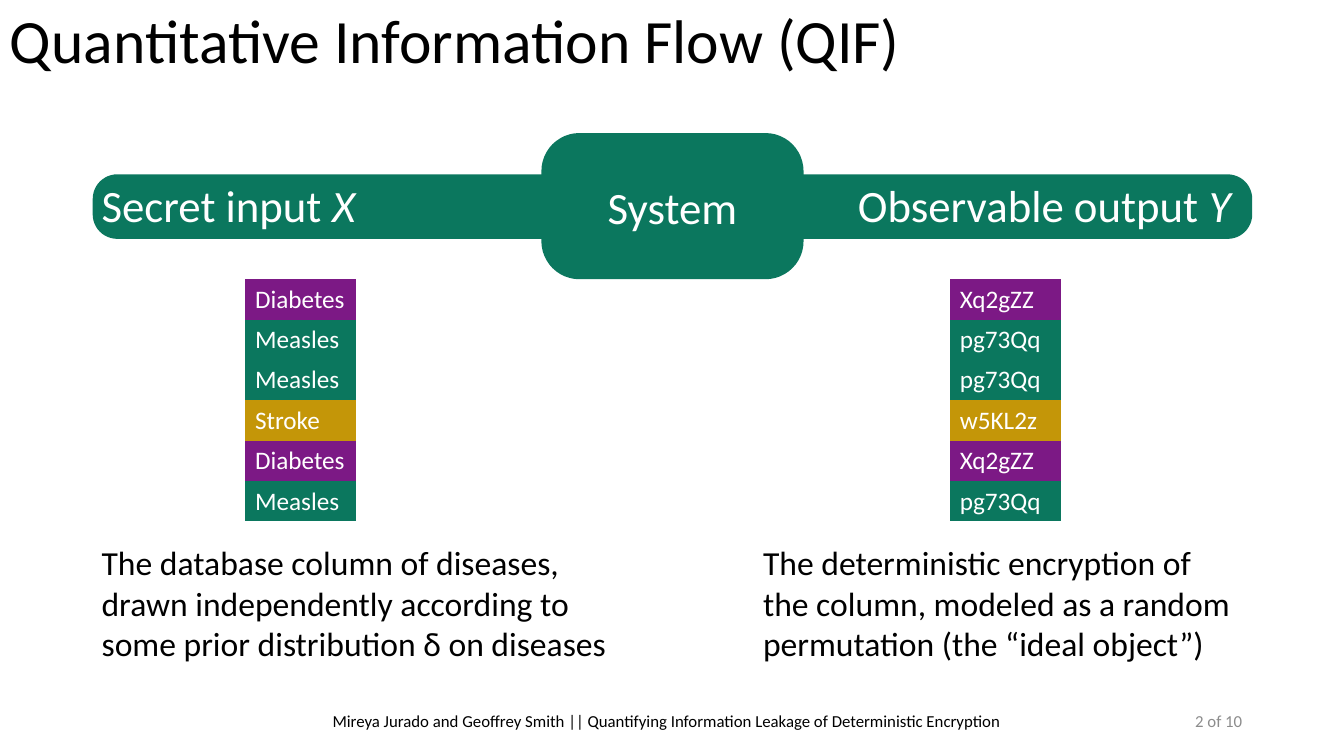
from pptx import Presentation
from pptx import util as u
from pptx.dml.color import RGBColor
from pptx.enum import shapes, text

EMU_PER_PX = 9144  # 100 px to the inch
FONT = "Calibri"
COLORS = {
    "green": "0B775E",
    "purple": "7C1985",
    "gold": "C49608",
    "black": "000000",
    "white": "FFFFFF",
    "gray": "8C8C8C",
}
PLAIN_TABLE_STYLE = "{2D5ABB26-0587-4C30-8999-92F81FD0307C}"

# Each disease has one ciphertext and one colour.
CIPHERTEXTS = {"Diabetes": "Xq2gZZ", "Measles": "pg73Qq", "Stroke": "w5KL2z"}
DISEASE_COLORS = {"Diabetes": "purple", "Measles": "green", "Stroke": "gold"}
PATIENTS = ["Diabetes", "Measles", "Measles", "Stroke", "Diabetes", "Measles"]


def px(*lengths):
    return [u.Emu(length * EMU_PER_PX) for length in lengths]


def color(name):
    return RGBColor.from_string(COLORS[name])


def fill_with(target, name):
    target.fill.solid()
    target.fill.fore_color.rgb = color(name)


def add_runs(frame, runs, size, name, align=text.PP_ALIGN.LEFT):
    """Write (words, italic) pairs into the first paragraph of the frame."""
    paragraph = frame.paragraphs[0]
    paragraph.alignment = align
    for words, italic in runs:
        run = paragraph.add_run()
        run.text = words
        run.font.name = FONT
        run.font.size = u.Pt(size)
        run.font.italic = italic
        run.font.color.rgb = color(name)


def add_label(slide, box, runs, size, name="black",
              align=text.PP_ALIGN.LEFT, anchor=text.MSO_ANCHOR.TOP):
    frame = slide.shapes.add_textbox(*px(*box)).text_frame
    frame.word_wrap = True
    frame.vertical_anchor = anchor
    add_runs(frame, runs, size, name, align)


def add_rounded_block(slide, box, rounding):
    block = slide.shapes.add_shape(
        shapes.MSO_SHAPE.ROUNDED_RECTANGLE, *px(*box))
    block.adjustments[0] = rounding
    block.shadow.inherit = False
    fill_with(block, "green")
    block.line.fill.background()
    return block


def add_column(slide, left, entries):
    """Draw a one-column table from (words, colour name) pairs."""
    row_height = 40
    box = px(left, 277, 110, row_height * len(entries))
    column = slide.shapes.add_table(len(entries), 1, *box).table
    column.first_row = column.horz_banding = False
    column._tbl.tblPr[0].text = PLAIN_TABLE_STYLE
    for row, (words, name) in enumerate(entries):
        cell = column.cell(row, 0)
        fill_with(cell, name)
        add_runs(cell.text_frame, [(words, False)], 18, "white")


def main():
    deck = Presentation()
    deck.slide_width, deck.slide_height = px(1333, 750)
    slide = deck.slides.add_slide(deck.slide_layouts[6])
    middle = text.MSO_ANCHOR.MIDDLE

    add_label(slide, (0, 0, 1169, 77),
              [("Quantitative Information Flow (QIF)", False)], 44,
              anchor=middle)

    add_rounded_block(slide, (92, 173, 1150, 64), 0.38)
    system = add_rounded_block(slide, (537, 132, 260, 145), 0.26)
    system.text_frame.vertical_anchor = middle
    add_runs(system.text_frame, [("System", False)], 32, "white",
             text.PP_ALIGN.CENTER)
    add_label(slide, (91, 171, 306, 64),
              [("Secret input ", False), ("X", True)], 32, "white")
    add_label(slide, (841, 171, 398, 64),
              [("Observable output ", False), ("Y", True)], 32, "white")

    add_column(slide, 243, [(d, DISEASE_COLORS[d]) for d in PATIENTS])
    add_column(slide, 942,
               [(CIPHERTEXTS[d], DISEASE_COLORS[d]) for d in PATIENTS])

    add_label(slide, (91, 533, 530, 131),
              [("The database column of diseases, drawn independently "
                "according to some prior distribution δ on diseases", False)],
              24)
    add_label(slide, (747, 533, 494, 131),
              [("The deterministic encryption of the column, modeled as a "
                "random permutation (the “ideal object”)", False)], 24)

    add_label(slide, (320, 700, 694, 30),
              [("Mireya Jurado and Geoffrey Smith || Quantifying Information "
                "Leakage of Deterministic Encryption", False)], 12)
    add_label(slide, (942, 695, 300, 40), [("2 of 10", False)], 12, "gray",
              text.PP_ALIGN.RIGHT, middle)

    deck.save("out.pptx")


if __name__ == "__main__":
    main()
